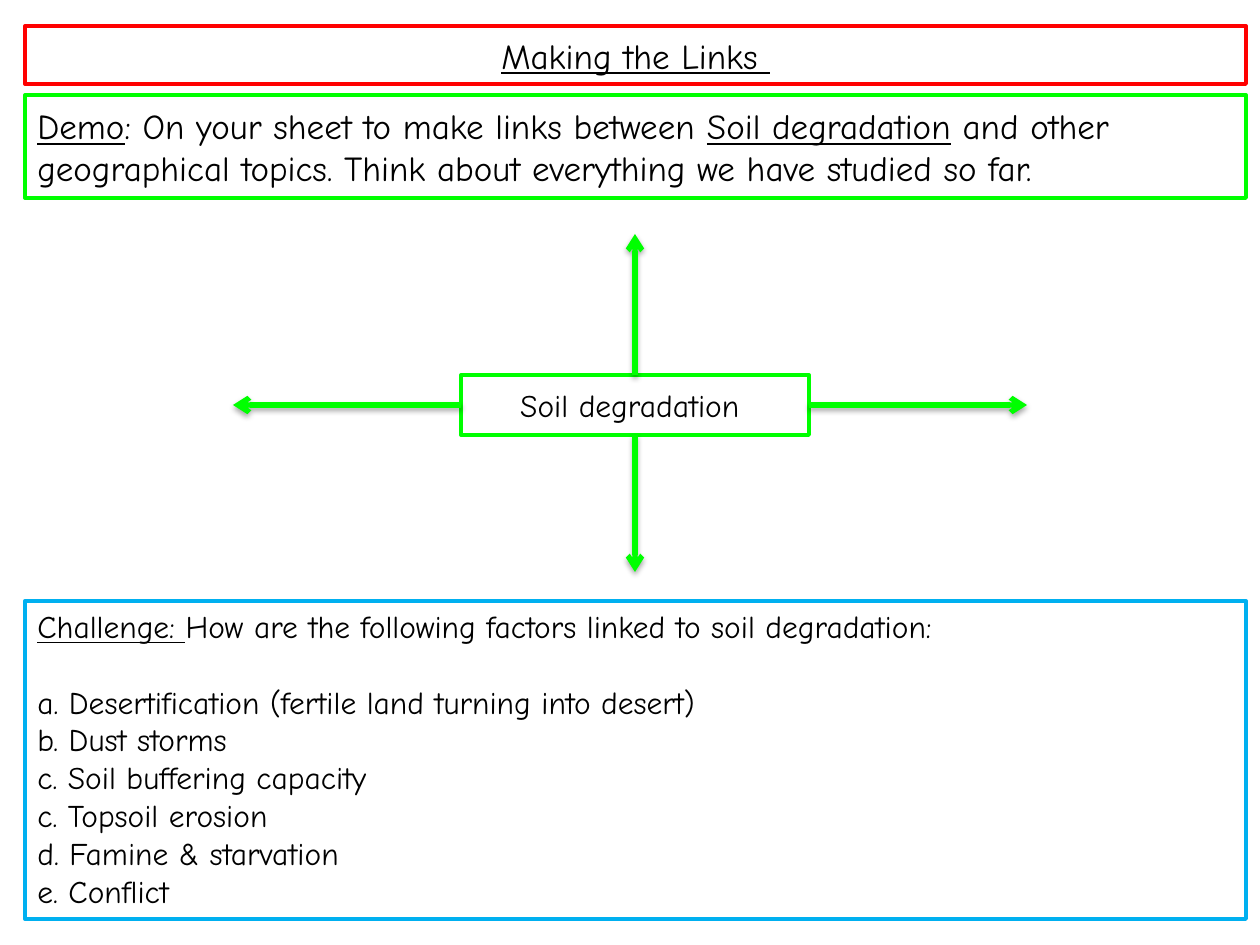
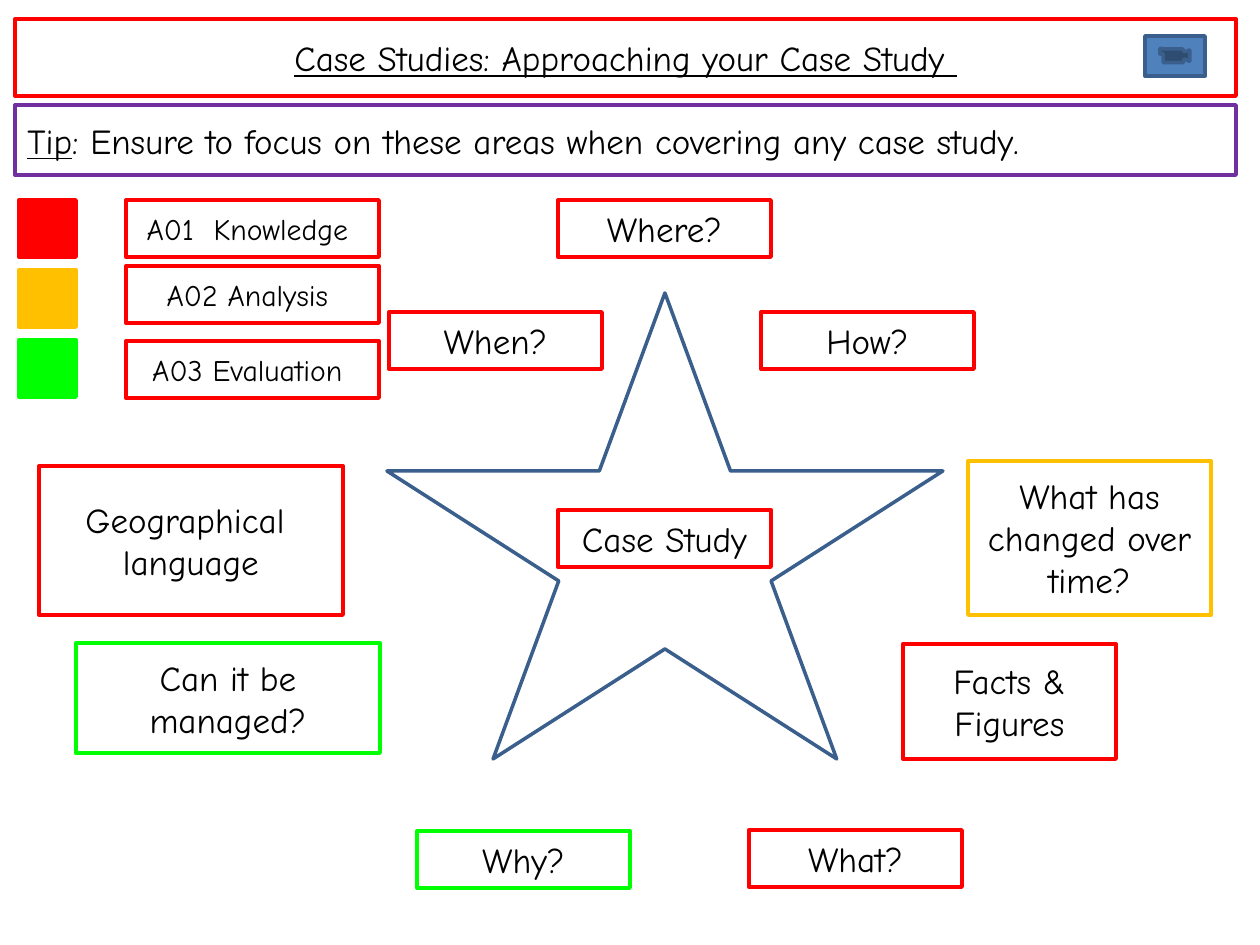
from lxml import etree
from pptx import Presentation
from pptx.dml.color import RGBColor
from pptx.enum.shapes import MSO_CONNECTOR, MSO_SHAPE
from pptx.enum.text import MSO_ANCHOR, MSO_AUTO_SIZE, PP_ALIGN
from pptx.oxml import parse_xml
from pptx.oxml.ns import qn
from pptx.util import Emu, Inches, Pt

FONT = "Comic Neue"
BLACK, WHITE = "000000", "FFFFFF"
RED, AMBER, GREEN = "FF0000", "FFC000", "00FF00"
SKY, PURPLE, BLUE, NAVY = "00B0F0", "7030A0", "4F81BD", "3A5F8C"
PX = Inches(1) / 126
BAND_W = 1221
A_NS = "http://schemas.openxmlformats.org/drawingml/2006/main"
SHADOW = (
    f'<a:effectLst xmlns:a="{A_NS}">'
    '<a:outerShdw blurRad="40000" dist="23000" dir="5400000" rotWithShape="0">'
    '<a:srgbClr val="000000"><a:alpha val="35000"/></a:srgbClr>'
    '</a:outerShdw></a:effectLst>'
)


def rgb(color):
    return RGBColor.from_string(color)


def box(slide, text, at, line=RED, fill=None, width=2.25, size=20, align=PP_ALIGN.CENTER,
        anchor=MSO_ANCHOR.MIDDLE, gap=0, shape=MSO_SHAPE.RECTANGLE, title=False):
    x, y, w, h = [Emu(round(v * PX)) for v in at]
    if title:
        sp = slide.shapes.title
        sp.left, sp.top, sp.width, sp.height = x, y, w, h
    else:
        sp = slide.shapes.add_shape(shape, x, y, w, h)
    sp.shadow.inherit = False
    if fill:
        sp.fill.solid()
        sp.fill.fore_color.rgb = rgb(fill)
    else:
        sp.fill.background()
    sp.line.color.rgb = rgb(line)
    sp.line.width = Pt(width)
    if not text:
        return sp
    tf = sp.text_frame
    tf.word_wrap = True
    tf.auto_size = MSO_AUTO_SIZE.NONE
    tf.vertical_anchor = anchor
    for i, content in enumerate(text.split("\n")):
        p = tf.add_paragraph() if i else tf.paragraphs[0]
        p.alignment = align
        if i == 1 and gap:
            p.space_before = Pt(gap)
        for j, part in enumerate(content.split("_")):
            if part:
                r = p.add_run()
                r.text = part
                r.font.name = FONT
                r.font.size = Pt(size)
                r.font.color.rgb = rgb(BLACK)
                r.font.underline = j % 2 == 1
    return sp


prs = Presentation()
prs.slide_width, prs.slide_height = Inches(10), Inches(7.5)
title_only = prs.slide_layouts[5]

links = prs.slides.add_slide(title_only)
box(links, "_Making the Links _", (25, 26, BAND_W, 58), title=True)
topic = box(links, "Soil degradation ", (461, 375, 348, 60), line=GREEN, size=18)
box(links, "_Demo_: On your sheet to make links between _Soil degradation_ and other "
    "geographical topics. Think about everything we have studied so far.",
    (25, 95, BAND_W, 103), line=GREEN, align=PP_ALIGN.LEFT)
box(links, "_Challenge: _How are the following factors linked to soil degradation:\n"
    "a. Desertification (fertile land turning into desert)\n"
    "b. Dust storms\n"
    "c. Soil buffering capacity\n"
    "c. Topsoil erosion\n"
    "d. Famine & starvation\n"
    "e. Conflict",
    (25, 601, BAND_W, 318), line=SKY, size=18, align=PP_ALIGN.LEFT,
    anchor=MSO_ANCHOR.TOP, gap=21.5)

for side, x, y in [(1, 233, 405), (3, 1027, 405), (2, 635, 572), (0, 635, 234)]:
    end_x, end_y = Emu(round(x * PX)), Emu(round(y * PX))
    arrow = links.shapes.add_connector(MSO_CONNECTOR.STRAIGHT, end_x, end_y, end_x, end_y)
    arrow.begin_connect(topic, side)
    arrow.line.color.rgb = rgb(GREEN)
    arrow.line.width = Pt(3)
    etree.SubElement(arrow.line._get_or_add_ln(), qn("a:tailEnd"), type="arrow")
    arrow._element.spPr.append(parse_xml(SHADOW))

study = prs.slides.add_slide(title_only)
box(study, "_Case Studies: Approaching your Case Study _", (15, 19, BAND_W, 77), title=True)
box(study, "", (1145, 36, 60, 40), line=NAVY, fill=BLUE, width=2,
    shape=MSO_SHAPE.ACTION_BUTTON_MOVIE)
box(study, "", (387, 293, 556, 466), line=NAVY, fill=WHITE, width=2,
    shape=MSO_SHAPE.STAR_5_POINT)

SMALL_W, SMALL_H = 213, 57
for text, x, y in [("Where?", 558, 200), ("What?", 749, 830), ("How?", 761, 312),
                   ("When?", 389, 312), ("Case Study", 558, 510)]:
    box(study, text, (x, y, SMALL_W, SMALL_H))
box(study, "Why?", (417, 831, SMALL_W, SMALL_H), line=GREEN)
box(study, "Facts & Figures", (903, 644, SMALL_W, 115))
box(study, "Geographical \nlanguage", (39, 466, 304, 149))
box(study, "Can it be managed?", (76, 643, 304, 110), line=GREEN)
box(study, "What has changed over time?", (968, 461, 243, 154), line=AMBER)

objectives = [(RED, "A01  Knowledge ", 200), (AMBER, "A02 Analysis ", 266),
              (GREEN, "A03 Evaluation ", 341)]
for i, (color, text, y) in enumerate(objectives):
    box(study, "", (19, 200 + 70 * i, 57, 57), line=color, fill=color)
    box(study, text, (126, y, 253, SMALL_H), size=17)

box(study, "_Tip_: Ensure to focus on these areas when covering any case study.",
    (15, 105, BAND_W, 70), line=PURPLE, align=PP_ALIGN.LEFT)

prs.save("out.pptx")
